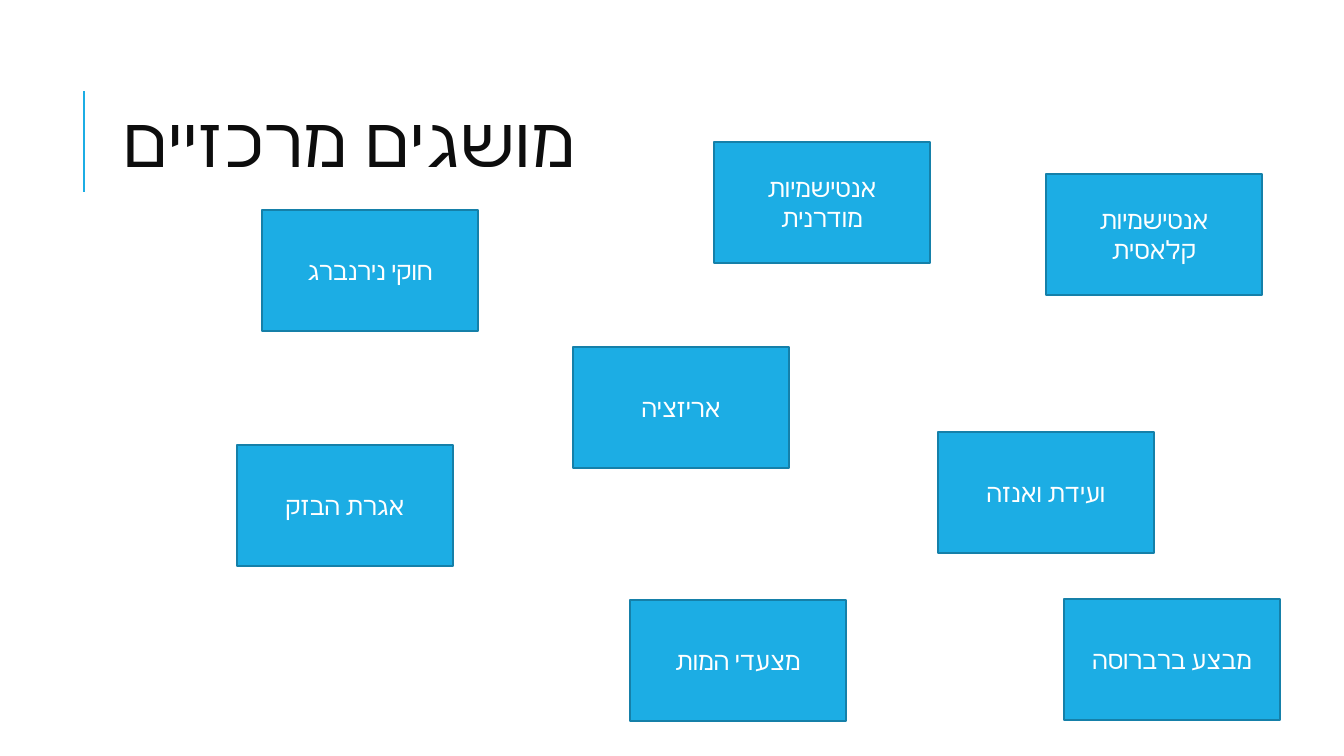
from dataclasses import dataclass

from lxml.etree import SubElement
from pptx import Presentation
from pptx.dml.color import RGBColor
from pptx.enum.shapes import MSO_CONNECTOR, MSO_SHAPE
from pptx.enum.text import MSO_ANCHOR, MSO_AUTO_SIZE, PP_ALIGN
from pptx.oxml.ns import qn
from pptx.util import Pt

EMU_PER_PX = 914400 / 100.8
SLIDE_SIZE = (1344, 756)
TITLE_ONLY_LAYOUT = 5
CARD_SIZE = (216, 121)

CONCEPTS = [
    ("אנטישמיות קלאסית", 1046, 174),
    ("מצעדי המות", 630, 600),
    ("אריזציה", 573, 347),
    ("ועידת ואנזה", 938, 432),
    ("אנטישמיות מודרנית", 714, 142),
    ("אגרת הבזק", 237, 445),
    ("חוקי נירנברג", 262, 210),
    ("מבצע ברברוסה", 1064, 599),
]


@dataclass(frozen=True)
class Theme:
    accent: RGBColor = RGBColor(0x1C, 0xAD, 0xE4)
    outline: RGBColor = RGBColor(0x15, 0x80, 0xA9)
    title_color: RGBColor = RGBColor(0x0D, 0x0D, 0x0D)
    card_color: RGBColor = RGBColor(0xFF, 0xFF, 0xFF)
    title_font: str = "Cabin"
    card_font: str = "Calibri"
    title_size: int = 50
    card_size: int = 18
    rule_width: float = 1.5
    outline_width: float = 1.25


def px(*lengths):
    """Turn whole pixels into EMU."""
    return [round(length * EMU_PER_PX) for length in lengths]


class SlideBuilder:
    def __init__(self, slide, theme):
        self.slide = slide
        self.theme = theme

    def set_font(self, paragraph, name, size, color):
        """Format a paragraph, naming the font for Hebrew script as well."""
        font = paragraph.font
        font.name = name
        font.size = Pt(size)
        font.color.rgb = color
        properties = paragraph._p.get_or_add_pPr().find(qn("a:defRPr"))
        SubElement(properties, qn("a:cs"), typeface=name)
        return properties

    def title(self, text, left, top, width, height):
        theme = self.theme
        shape = self.slide.shapes.title
        shape.left, shape.top, shape.width, shape.height = px(left, top, width, height)
        frame = shape.text_frame
        frame.text = text
        frame.word_wrap = True
        frame.auto_size = MSO_AUTO_SIZE.NONE
        frame.vertical_anchor = MSO_ANCHOR.MIDDLE
        paragraph = frame.paragraphs[0]
        paragraph.alignment = PP_ALIGN.LEFT
        paragraph.line_spacing = 0.8
        paragraph._p.get_or_add_pPr().set("rtl", "1")
        properties = self.set_font(
            paragraph, theme.title_font, theme.title_size, theme.title_color
        )
        properties.set("spc", "100")

    def rule(self, x, start, end):
        connector = self.slide.shapes.add_connector(
            MSO_CONNECTOR.STRAIGHT, *px(x, start, x, end)
        )
        connector.line.color.rgb = self.theme.accent
        connector.line.width = Pt(self.theme.rule_width)
        SubElement(connector._element.spPr, qn("a:effectLst"))

    def card(self, text, left, top):
        theme = self.theme
        shape = self.slide.shapes.add_shape(
            MSO_SHAPE.RECTANGLE, *px(left, top, *CARD_SIZE)
        )
        shape.shadow.inherit = False
        shape.fill.solid()
        shape.fill.fore_color.rgb = theme.accent
        shape.line.color.rgb = theme.outline
        shape.line.width = Pt(theme.outline_width)
        frame = shape.text_frame
        frame.text = text
        frame.word_wrap = True
        frame.vertical_anchor = MSO_ANCHOR.MIDDLE
        paragraph = frame.paragraphs[0]
        paragraph.alignment = PP_ALIGN.CENTER
        self.set_font(paragraph, theme.card_font, theme.card_size, theme.card_color)


def main():
    presentation = Presentation()
    presentation.slide_width, presentation.slide_height = px(*SLIDE_SIZE)
    layout = presentation.slide_layouts[TITLE_ONLY_LAYOUT]
    builder = SlideBuilder(presentation.slides.add_slide(layout), Theme())

    builder.rule(84, 192, 91)
    builder.title("מושגים מרכזיים", 113, 65, 1072, 165)
    for text, left, top in CONCEPTS:
        builder.card(text, left, top)

    presentation.save("out.pptx")


if __name__ == "__main__":
    main()
